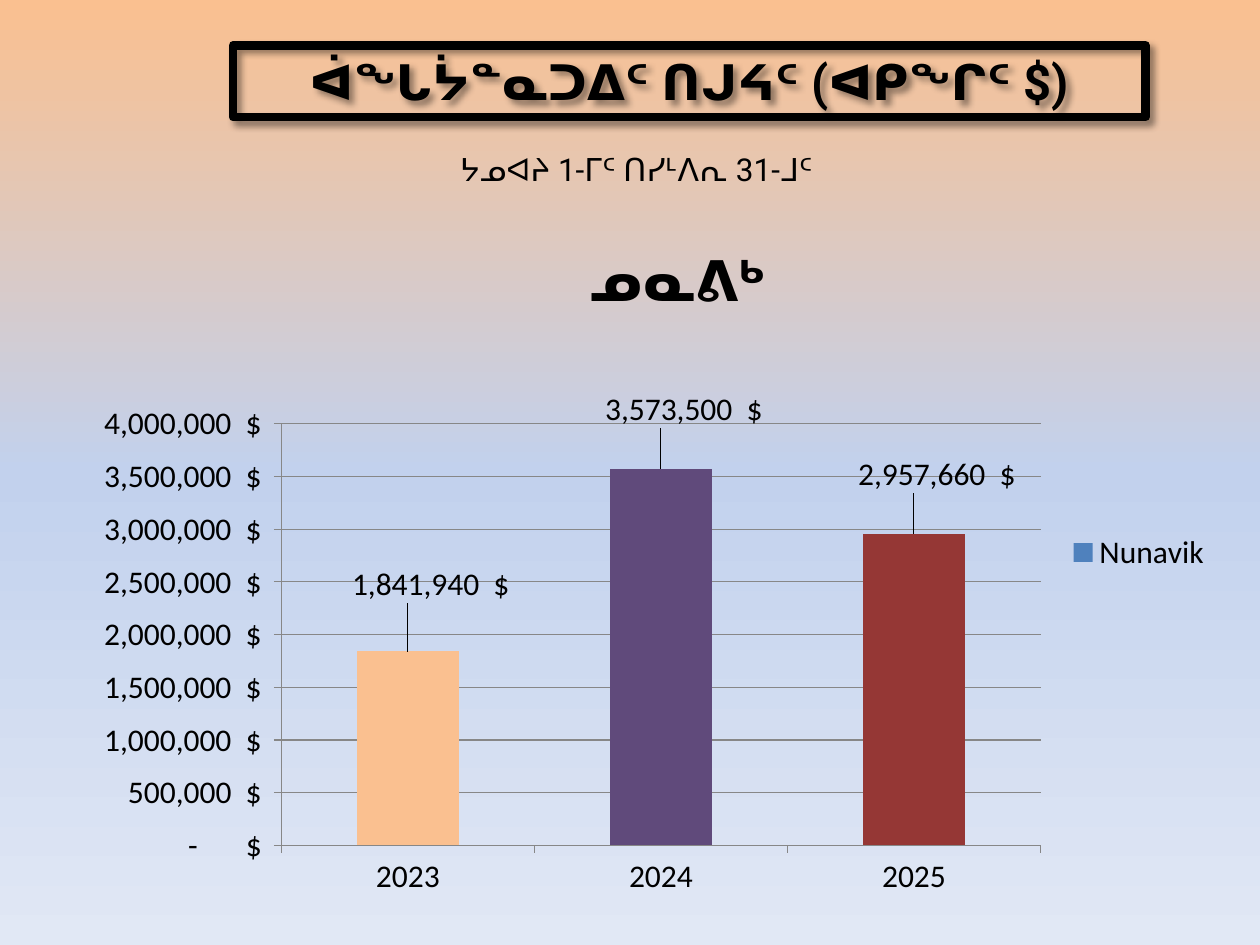
from copy import deepcopy

from lxml.etree import SubElement
from pptx import Presentation
from pptx.chart.data import CategoryChartData
from pptx.dml.color import RGBColor
from pptx.enum.chart import XL_CHART_TYPE, XL_LABEL_POSITION, XL_LEGEND_POSITION, XL_TICK_MARK
from pptx.enum.shapes import MSO_SHAPE
from pptx.enum.text import MSO_ANCHOR, MSO_AUTO_SIZE, PP_ALIGN
from pptx.oxml.ns import qn
from pptx.util import Inches, Pt

BLACK = RGBColor(0x00, 0x00, 0x00)
GRID = RGBColor(0x87, 0x87, 0x87)
SERIES_BLUE = RGBColor(0x4F, 0x81, 0xBD)
PEACH = RGBColor(0xFA, 0xC0, 0x90)
PURPLE = RGBColor(0x60, 0x4A, 0x7B)
DARK_RED = RGBColor(0x95, 0x37, 0x35)
SKY = RGBColor(0xC2, 0xD1, 0xED)
PALE_SKY = RGBColor(0xE1, 0xE8, 0xF5)

DOLLARS = r'_ * #,##0_)\ "$"_ ;_ * \(#,##0\)\ "$"_ ;_ * "-"??_)\ "$"_ ;_ @_ '
YEARS = [
    ("2023", 1841940, PEACH, (0.02, -0.06)),
    ("2024", 3573500, PURPLE, (0.02, -0.05)),
    ("2025", 2957660, DARK_RED, (0.02, -0.05)),
]


def paint_background(slide):
    fill = slide.background.fill
    fill.gradient()
    fill.gradient_angle = 270
    stop_list = slide.element.find(".//" + qn("a:gsLst"))
    stop_list.insert(1, deepcopy(stop_list[0]))
    for stop, position, color in zip(fill.gradient_stops, (0, 0.5, 1), (PEACH, SKY, PALE_SKY)):
        stop.position = position
        stop.color.rgb = color


def write_text(frame, text, *, size, font="Roboto", bold=False):
    frame.word_wrap = True
    frame.auto_size = MSO_AUTO_SIZE.SHAPE_TO_FIT_TEXT
    paragraph = frame.paragraphs[0]
    paragraph.alignment = PP_ALIGN.CENTER
    run = paragraph.add_run()
    run.text = text
    run.font.name = font
    run.font.size = Pt(size)
    run.font.bold = bold
    run.font.color.rgb = BLACK


def add_shadow(shape):
    shape.shadow.inherit = False
    effects = shape.element.spPr.find(qn("a:effectLst"))
    shadow = SubElement(effects, qn("a:outerShdw"), blurRad=str(Pt(4)), dist=str(Pt(3)),
                        dir="2700000", algn="tl", rotWithShape="0")
    color = SubElement(shadow, qn("a:srgbClr"), val=str(BLACK))
    SubElement(color, qn("a:alpha"), val="40000")


def add_heading(slide, text):
    heading = slide.shapes.add_shape(
        MSO_SHAPE.RECTANGLE, Inches(1.85), Inches(0.36), Inches(7.24), Inches(0.57))
    heading.fill.background()
    heading.line.color.rgb = BLACK
    heading.line.width = Pt(5)
    SubElement(heading.line._get_or_add_ln(), qn("a:round"))
    add_shadow(heading)
    heading.text_frame.vertical_anchor = MSO_ANCHOR.TOP
    write_text(heading.text_frame, text, size=28, bold=True)


def add_period(slide, text):
    period = slide.shapes.add_textbox(Inches(2.01), Inches(1.14), Inches(6.08), Inches(0.4))
    write_text(period.text_frame, text, size=18)


def set_layout(parent, index, **settings):
    for old in parent.findall(qn("c:layout")):
        parent.remove(old)
    layout = SubElement(parent, qn("c:layout"))
    parent.insert(index, layout)
    manual = SubElement(layout, qn("c:manualLayout"))
    for name, value in settings.items():
        SubElement(manual, qn("c:" + name), val=str(value))


def style_axis(axis):
    axis.major_tick_mark = XL_TICK_MARK.OUTSIDE
    axis.format.line.color.rgb = GRID
    axis.format.line.width = Pt(0.75)


def style_points(series):
    for index, (_, _, color, _) in enumerate(YEARS):
        point = series.points[index]
        point.format.fill.solid()
        point.format.fill.fore_color.rgb = color
        point.data_label.position = XL_LABEL_POSITION.OUTSIDE_END
    labels = series._element.iter(qn("c:dLbl"))
    for label, (_, _, _, (x, y)) in zip(list(labels), YEARS):
        set_layout(label, 1, x=x, y=y)


def add_revenue_chart(slide):
    revenue = CategoryChartData(number_format=DOLLARS)
    revenue.categories = [year for year, *_ in YEARS]
    revenue.add_series("Nunavik", [amount for _, amount, *_ in YEARS])
    chart = slide.shapes.add_chart(
        XL_CHART_TYPE.COLUMN_CLUSTERED, Inches(0.59), Inches(1.55),
        Inches(9.13), Inches(5.67), revenue).chart
    chart.font.name = "Calibri"
    chart.font.size = Pt(18)
    chart.font.color.rgb = BLACK

    write_text(chart.chart_title.text_frame, "ᓄᓇᕕᒃ", size=32, font="Calibri", bold=True)
    set_layout(chart.chart_title._element, 1, xMode="edge", yMode="edge", x=0.44, y=0.05)
    set_layout(chart._chartSpace.chart.plotArea, 0, layoutTarget="inner",
               xMode="edge", yMode="edge", x=0.18, y=0.32, w=0.66, h=0.59)

    chart.has_legend = True
    chart.legend.position = XL_LEGEND_POSITION.RIGHT
    chart.legend.include_in_layout = False

    amounts = chart.value_axis
    style_axis(chart.category_axis)
    style_axis(amounts)
    amounts.minimum_scale = 0
    amounts.maximum_scale = 4000000
    amounts.major_unit = 500000
    amounts.tick_labels.number_format = DOLLARS
    amounts.tick_labels.number_format_is_linked = False
    amounts.major_gridlines.format.line.color.rgb = GRID
    amounts.major_gridlines.format.line.width = Pt(0.75)

    plot = chart.plots[0]
    plot.gap_width = 150
    plot.vary_by_categories = False
    series = plot.series[0]
    series.format.fill.solid()
    series.format.fill.fore_color.rgb = SERIES_BLUE
    series.data_labels.show_value = True
    series.data_labels.number_format = DOLLARS
    series.data_labels.number_format_is_linked = False
    style_points(series)


def main():
    presentation = Presentation()
    presentation.slide_width = Inches(10)
    presentation.slide_height = Inches(7.5)
    slide = presentation.slides.add_slide(presentation.slide_layouts[6])
    paint_background(slide)
    add_heading(slide, "ᐋᖓᔮᓐᓇᑐᐃᑦ ᑎᒍᔦᑦ (ᐊᑭᖏᑦ $)")
    add_revenue_chart(slide)
    add_period(slide, "ᔭᓄᐊᔨ 1-ᒥᑦ ᑎᓯᒻᐱᕆ 31-ᒧᑦ")
    presentation.save("out.pptx")


if __name__ == "__main__":
    main()
